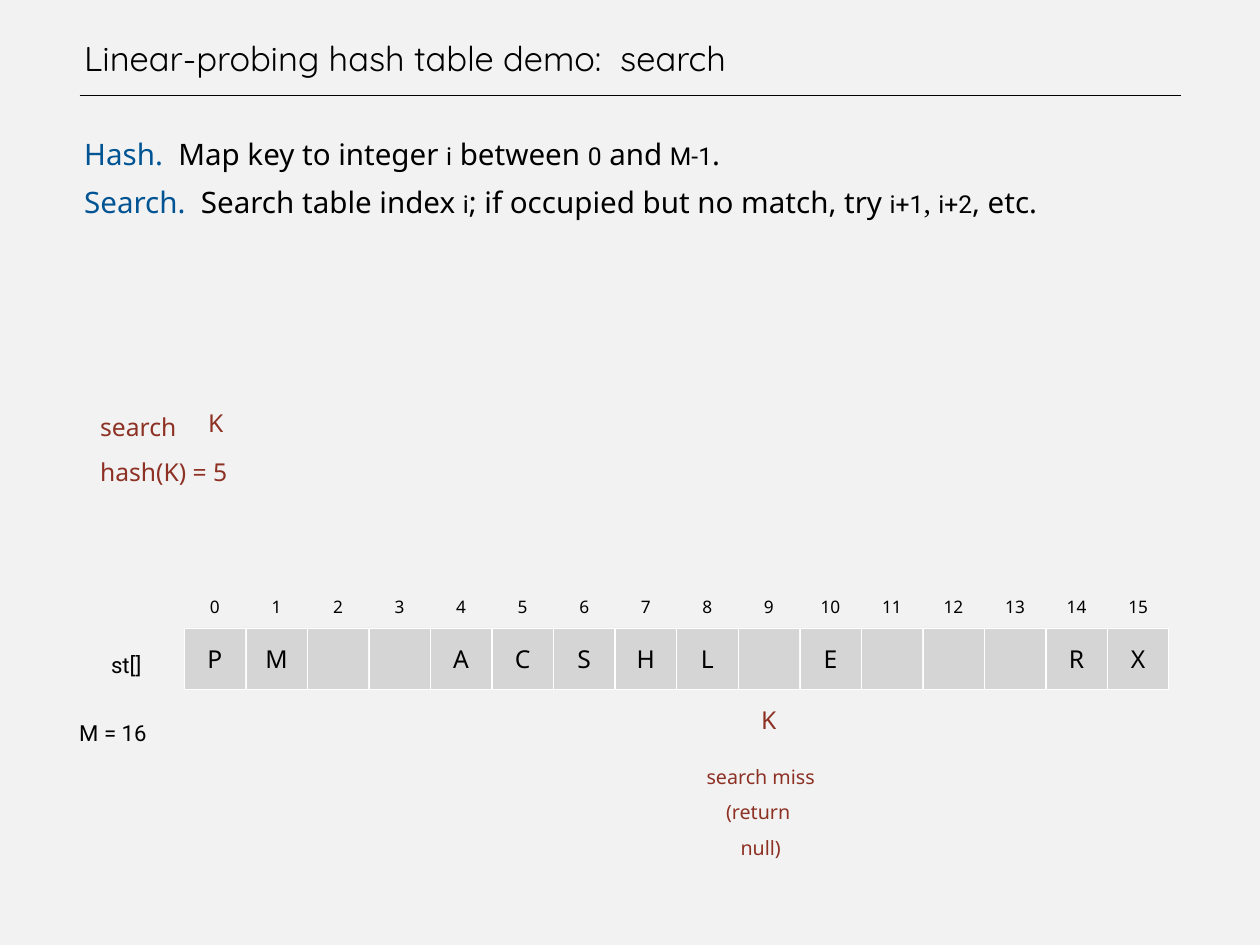
from dataclasses import dataclass

from lxml.etree import SubElement
from pptx import Presentation
from pptx.dml.color import RGBColor
from pptx.enum.shapes import MSO_CONNECTOR, MSO_SHAPE
from pptx.enum.text import MSO_ANCHOR as Anchor, MSO_AUTO_SIZE as AutoSize, PP_ALIGN as Align
from pptx.oxml.ns import qn
from pptx.slide import Slide
from pptx.text.text import TextFrame
from pptx.util import Inches, Length, Pt

BLACK = RGBColor(0x00, 0x00, 0x00)
WHITE = RGBColor(0xFF, 0xFF, 0xFF)
PAPER = RGBColor(0xF2, 0xF2, 0xF2)
CELL_GRAY = RGBColor(0xD5, 0xD5, 0xD5)
TERM_BLUE = RGBColor(0x00, 0x54, 0x93)
PROBE_RED = RGBColor(0x8D, 0x31, 0x24)

NOTO, ROBOTO, QUICKSAND, TIMES = "Noto Sans", "Roboto", "Quicksand", "Times New Roman"

CELL = 0.69
TABLE_LEFT, TABLE_TOP = 2.08, 7.09
PITCH = (12.5 - TABLE_LEFT) / 15
KEYS = ["P", "M", "", "", "A", "C", "S", "H", "L", "", "E", "", "", "", "R", "X"]


@dataclass(frozen=True)
class Run:
    text: str
    size: float = 20
    font: str = NOTO
    color: RGBColor = BLACK
    starts_line: bool = False


@dataclass(frozen=True)
class Block:
    lines: list[list[Run]]
    align: Align = Align.CENTER
    spacing: float | Length = 1.0
    indent: float = 0
    inset: float = 0
    anchor: Anchor = Anchor.TOP


@dataclass(frozen=True)
class Label:
    left: float
    top: float
    width: float
    height: float
    block: Block


def code(text: str) -> Run:
    return Run(text, 20, ROBOTO)


def prose(text: str) -> Run:
    return Run(text, 24)


def term(text: str) -> Run:
    return Run(text, 24, color=TERM_BLUE)


def centered(run: Run) -> Block:
    return Block([[run]], anchor=Anchor.MIDDLE)


def write(frame: TextFrame, block: Block) -> None:
    inset = Inches(block.inset)
    frame_format = {
        "word_wrap": True,
        "auto_size": AutoSize.NONE,
        "vertical_anchor": block.anchor,
        "margin_left": inset,
        "margin_top": inset,
        "margin_right": inset,
        "margin_bottom": inset,
    }
    line_format = {
        "alignment": block.align,
        "line_spacing": block.spacing,
        "space_before": Pt(0),
        "space_after": Pt(0),
    }
    for attribute, value in frame_format.items():
        setattr(frame, attribute, value)
    for index, runs in enumerate(block.lines):
        line = frame.add_paragraph() if index else frame.paragraphs[0]
        for attribute, value in line_format.items():
            setattr(line, attribute, value)
        properties = line._p.get_or_add_pPr()
        properties.set("marL", str(Inches(block.indent)))
        properties.set("indent", "0")
        SubElement(properties, qn("a:buNone"))
        for run in runs:
            if run.starts_line:
                line.add_line_break()
            piece = line.add_run()
            piece.text = run.text
            piece.font.size = Pt(run.size)
            piece.font.name = run.font
            piece.font.color.rgb = run.color


def fill_placeholder(slide: Slide, index: int, label: Label) -> None:
    holder = slide.placeholders[index]
    for side in ("left", "top", "width", "height"):
        setattr(holder, side, Inches(getattr(label, side)))
    write(holder.text_frame, label.block)


def add_label(slide: Slide, label: Label) -> None:
    sides = (label.left, label.top, label.width, label.height)
    box = slide.shapes.add_textbox(*map(Inches, sides))
    write(box.text_frame, label.block)


def add_title_rule(slide: Slide) -> None:
    rule = slide.shapes.add_connector(
        MSO_CONNECTOR.STRAIGHT, Inches(0.9), Inches(1.08), Inches(13.33), Inches(1.08)
    )
    rule.line.color.rgb = BLACK
    rule.line.width = Pt(1)
    SubElement(rule._element.spPr, qn("a:effectLst"))


def add_slot(slide: Slide, index: int, key: str) -> None:
    left = TABLE_LEFT + index * PITCH
    slot = slide.shapes.add_shape(
        MSO_SHAPE.RECTANGLE, Inches(left), Inches(TABLE_TOP), Inches(CELL), Inches(CELL)
    )
    slot.shadow.inherit = False
    slot.fill.solid()
    slot.fill.fore_color.rgb = CELL_GRAY
    slot.line.color.rgb = WHITE
    slot.line.width = Pt(0.5)
    if key:
        write(slot.text_frame, centered(Run(key)))
    add_label(slide, Label(left, 6.61, CELL, 0.48, centered(Run(str(index), 14))))


TITLE = Label(0.89, 0, 12.44, 0.89, Block(
    [[Run("Linear-probing hash table demo:  search", 28, QUICKSAND)]],
    Align.LEFT, indent=0.06, anchor=Anchor.BOTTOM,
))
RULES = Label(0.89, 1.39, 12.44, 8.89, Block(
    [
        [term("Hash.  "), prose("Map key to integer "), code("i"), prose(" between "),
         code("0"), prose(" and "), code("M-1"), prose(".")],
        [term("Search.  "), prose("Search table index "), code("i"),
         prose("; if occupied but no match, try "), code("i+1"), Run(", ", 24, TIMES),
         code("i+2"), prose(", etc.")],
    ],
    Align.LEFT, Pt(39), indent=0.06,
))
PROBED_KEY = centered(Run("K", color=PROBE_RED))
LABELS = [
    Label(1.01, 7.24, 0.83, 0.4, Block([[Run("st[]", 18, ROBOTO)]], spacing=1.2, inset=0.06)),
    Label(0.71, 8, 1.13, 0.56, Block([[Run("M = 16", 18, ROBOTO)]], spacing=1.2, inset=0.06)),
    Label(1.01, 4.43, 1.72, 0.94, Block(
        [[Run("search", color=PROBE_RED)], [Run("hash(K) = 5", color=PROBE_RED)]],
        Align.LEFT, 1.5, 0.06, 0.06,
    )),
    Label(2.09, 4.43, CELL, CELL, PROBED_KEY),
    Label(8.33, 7.78, CELL, CELL, PROBED_KEY),
    Label(7.85, 8.44, 1.47, 0.77, Block(
        [
            [Run("search miss", 16, color=PROBE_RED)],
            [Run("(return ", 16, color=PROBE_RED),
             Run("null)", 16, color=PROBE_RED, starts_line=True)],
        ],
        spacing=1.5, inset=0.06,
    )),
]


def main() -> None:
    deck = Presentation()
    deck.slide_width, deck.slide_height = Inches(14.22), Inches(10.67)
    slide = deck.slides.add_slide(deck.slide_layouts[1])
    slide.background.fill.solid()
    slide.background.fill.fore_color.rgb = PAPER
    fill_placeholder(slide, 0, TITLE)
    fill_placeholder(slide, 1, RULES)
    add_title_rule(slide)
    for index, key in enumerate(KEYS):
        add_slot(slide, index, key)
    for label in LABELS:
        add_label(slide, label)
    deck.save("out.pptx")


if __name__ == "__main__":
    main()
